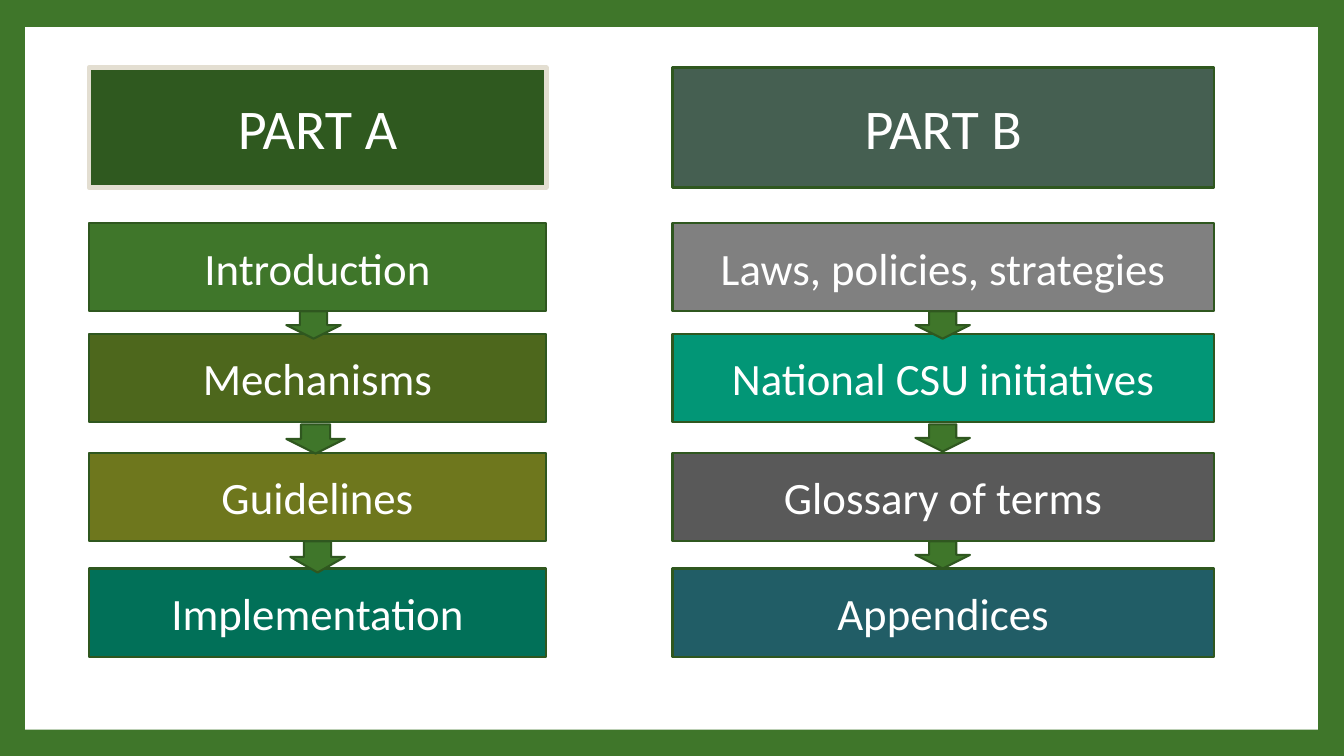
"""Build a slide outlining Part A and Part B as two columns of linked steps."""
from dataclasses import dataclass

import pptx
import pptx.dml.color
import pptx.enum.shapes
import pptx.enum.text
import pptx.util
from pptx.dml.color import RGBColor
from pptx.util import Inches

WHITE = RGBColor(0xFF, 0xFF, 0xFF)
GREEN = RGBColor(0x3F, 0x76, 0x2A)
DARK_GREEN = RGBColor(0x2F, 0x59, 0x1F)
OUTLINE = RGBColor(0x2F, 0x57, 0x1F)
CREAM = RGBColor(0xE3, 0xDE, 0xD1)
OLIVE = RGBColor(0x4D, 0x67, 0x1C)
MUSTARD = RGBColor(0x6E, 0x77, 0x1D)
DEEP_TEAL = RGBColor(0x01, 0x70, 0x58)
SLATE = RGBColor(0x45, 0x5F, 0x51)
GRAY = RGBColor(0x80, 0x80, 0x80)
TEAL = RGBColor(0x02, 0x96, 0x76)
DARK_GRAY = RGBColor(0x59, 0x59, 0x59)
BLUE = RGBColor(0x21, 0x5D, 0x66)

RECT = pptx.enum.shapes.MSO_SHAPE.RECTANGLE
DOWN_ARROW = pptx.enum.shapes.MSO_SHAPE.DOWN_ARROW
FONT = "Calibri"
HEADER_TOP, HEADER_HEIGHT = 0.67, 1.19
STEP_TOPS = (2.21, 3.31, 4.49, 5.64)
STEP_HEIGHT = 0.88
ARROW_TOPS = (3.09, 4.21, 5.37)


@dataclass(frozen=True)
class Box:
    text: str
    fill: RGBColor
    line: RGBColor = OUTLINE
    line_width: float = 1.5
    size: int = 32


@dataclass(frozen=True)
class Arrow:
    left: float
    width: float = 0.54
    height: float = 0.27


@dataclass(frozen=True)
class Column:
    left: float
    width: float
    header: Box
    steps: tuple[Box, ...]
    arrows: tuple[Arrow, ...]


COLUMNS = (
    Column(
        0.88, 4.54,
        Box("PART A", DARK_GREEN, CREAM, 3, 40),
        (Box("Introduction", GREEN), Box("Mechanisms", OLIVE),
         Box("Guidelines", MUSTARD), Box("Implementation", DEEP_TEAL)),
        (Arrow(2.84), Arrow(2.84, 0.58, 0.29), Arrow(2.88, height=0.31)),
    ),
    Column(
        6.67, 5.37,
        Box("PART B", SLATE, size=40),
        (Box("Laws, policies, strategies", GRAY), Box("National CSU initiatives", TEAL),
         Box("Glossary of terms", DARK_GRAY), Box("Appendices", BLUE)),
        (Arrow(9.08),) * 3,
    ),
)


def add_filled(s: pptx.slide.Slide, kind: pptx.enum.shapes.MSO_SHAPE, left: float, top: float,
               width: float, height: float, fill: RGBColor, line: RGBColor | None = OUTLINE,
               line_width: float = 1.5) -> pptx.shapes.autoshape.Shape:
    """Add a flat shape with a solid fill and an optional outline."""
    sp = s.shapes.add_shape(kind, Inches(left), Inches(top), Inches(width), Inches(height))
    sp.shadow.inherit = False
    sp.fill.solid()
    sp.fill.fore_color.rgb = fill
    if line is None:
        sp.line.fill.background()
    else:
        sp.line.color.rgb = line
        sp.line.width = pptx.util.Pt(line_width)
    return sp


def add_box(s: pptx.slide.Slide, box: Box, left: float, top: float,
            width: float, height: float) -> None:
    """Add a rectangle with one centred line of text."""
    sp = add_filled(s, RECT, left, top, width, height, box.fill, box.line, box.line_width)
    tf = sp.text_frame
    tf.word_wrap = True
    tf.vertical_anchor = pptx.enum.text.MSO_ANCHOR.MIDDLE
    p = tf.paragraphs[0]
    p.text = box.text
    p.alignment = pptx.enum.text.PP_ALIGN.CENTER
    p.font.name = FONT
    p.font.size = pptx.util.Pt(box.size)
    p.font.color.rgb = WHITE


def add_column(s: pptx.slide.Slide, column: Column) -> None:
    """Add a header and its steps."""
    add_box(s, column.header, column.left, HEADER_TOP, column.width, HEADER_HEIGHT)
    for step, top in zip(column.steps, STEP_TOPS):
        add_box(s, step, column.left, top, column.width, STEP_HEIGHT)


def add_arrows(s: pptx.slide.Slide, column: Column) -> None:
    """Add the arrows that lead from step to step."""
    for arrow, top in zip(column.arrows, ARROW_TOPS):
        add_filled(s, DOWN_ARROW, arrow.left, top, arrow.width, arrow.height, GREEN)


def main() -> None:
    """Build and save the slide."""
    prs = pptx.Presentation()
    prs.slide_width, prs.slide_height = Inches(13.33), Inches(7.5)
    s = prs.slides.add_slide(prs.slide_layouts[6])
    s.background.fill.solid()
    s.background.fill.fore_color.rgb = GREEN
    add_filled(s, RECT, 0.25, 0.27, 12.82, 6.97, WHITE, None)
    for column in COLUMNS:
        add_column(s, column)
    for column in COLUMNS:
        add_arrows(s, column)
    prs.save("out.pptx")


if __name__ == "__main__":
    main()
